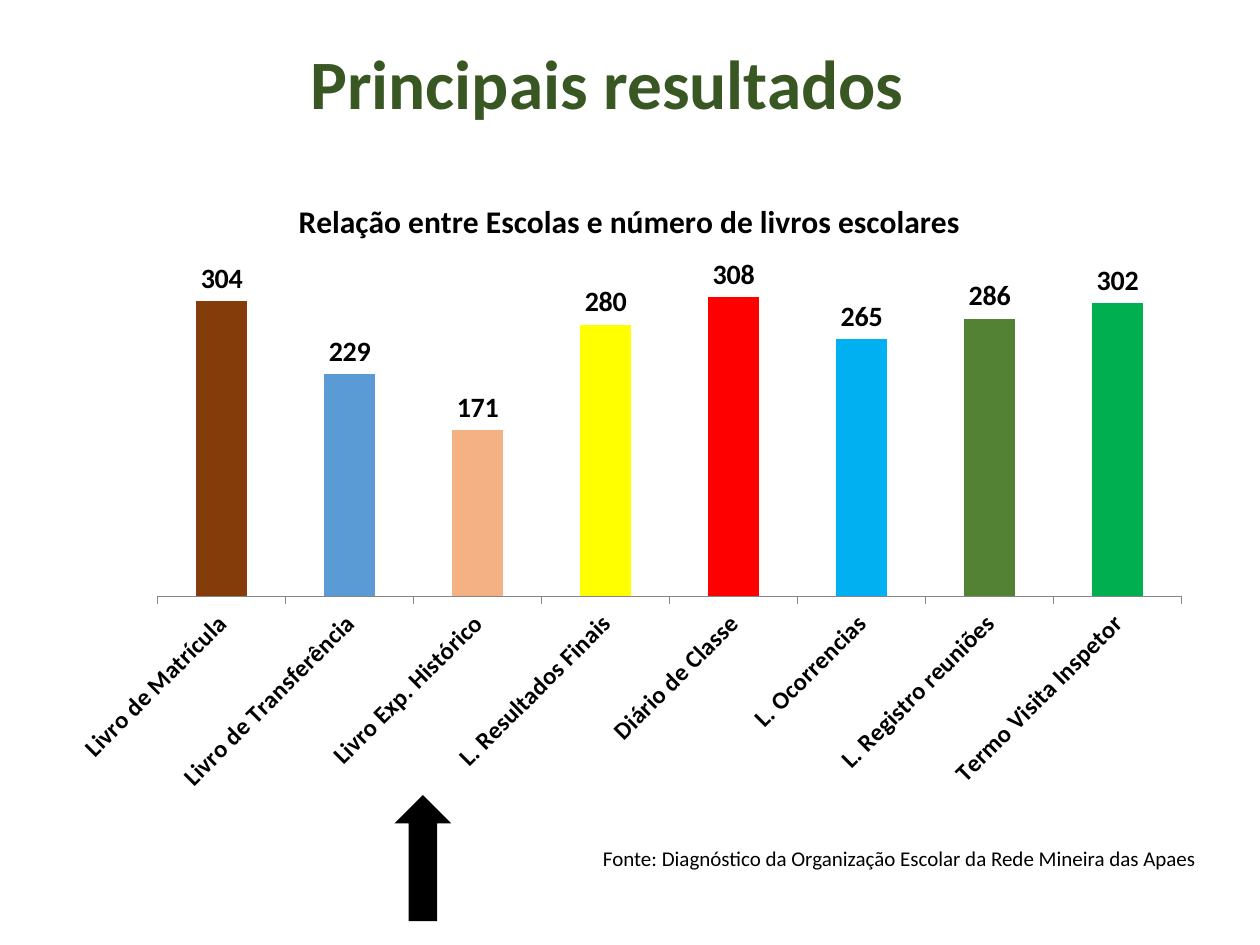
from lxml.etree import SubElement
from pptx import Presentation
from pptx.chart.data import CategoryChartData
from pptx.dml.color import RGBColor
from pptx.enum.chart import XL_CHART_TYPE, XL_LABEL_POSITION, XL_TICK_MARK
from pptx.enum.shapes import MSO_SHAPE
from pptx.enum.text import MSO_ANCHOR, PP_ALIGN
from pptx.oxml.ns import qn
from pptx.util import Pt

BLACK = RGBColor(0x00, 0x00, 0x00)
GRAY = RGBColor(0x86, 0x86, 0x86)
DARK_GREEN = RGBColor(0x38, 0x57, 0x23)
BROWN = RGBColor(0x84, 0x3C, 0x0B)
BLUE = RGBColor(0x5B, 0x9B, 0xD5)
PEACH = RGBColor(0xF4, 0xB1, 0x83)
YELLOW = RGBColor(0xFF, 0xFF, 0x00)
RED = RGBColor(0xFF, 0x00, 0x00)
SKY_BLUE = RGBColor(0x00, 0xB0, 0xF0)
OLIVE_GREEN = RGBColor(0x54, 0x82, 0x35)
GREEN = RGBColor(0x00, 0xB0, 0x50)

BOOKS = [
    ("Livro de Matrícula", 304, BROWN),
    ("Livro de Transferência", 229, BLUE),
    ("Livro Exp. Histórico", 171, PEACH),
    ("L. Resultados Finais", 280, YELLOW),
    ("Diário de Classe", 308, RED),
    ("L. Ocorrencias", 265, SKY_BLUE),
    ("L. Registro reuniões", 286, OLIVE_GREEN),
    ("Termo Visita Inspetor", 302, GREEN),
]


def format_font(font, size, bold=False, color=BLACK):
    values = {"name": "Calibri", "size": Pt(size), "bold": bold}
    for attribute, value in values.items():
        setattr(font, attribute, value)
    font.color.rgb = color


def add_text(slide, text, box, alignment, size, bold, color):
    shape = slide.shapes.add_textbox(*map(Pt, box))
    shape.text_frame.word_wrap = True
    shape.text_frame.vertical_anchor = MSO_ANCHOR.MIDDLE
    paragraph = shape.text_frame.paragraphs[0]
    paragraph.text = text
    paragraph.alignment = alignment
    format_font(paragraph.runs[0].font, size, bold, color)


presentation = Presentation()
presentation.slide_width = Pt(720)
presentation.slide_height = Pt(540)
slide = presentation.slides.add_slide(presentation.slide_layouts[6])

add_text(slide, "Principais resultados", (36.7, 13, 620.6, 67.7),
         PP_ALIGN.CENTER, 39.6, True, DARK_GREEN)
add_text(slide, "Fonte: Diagnóstico da Organização Escolar da Rede Mineira das Apaes",
         (337.5, 479.5, 360, 21.8), PP_ALIGN.JUSTIFY, 12, False, BLACK)

# Chart
chart_data = CategoryChartData()
chart_data.categories = [name for name, count, color in BOOKS]
chart_data.add_series("Series 1", [count for name, count, color in BOOKS])
chart = slide.shapes.add_chart(XL_CHART_TYPE.COLUMN_CLUSTERED, Pt(31), Pt(100),
                               Pt(657.4), Pt(359.3), chart_data).chart
format_font(chart.font, 10)
chart.has_legend = False
chart.has_title = True
title_paragraph = chart.chart_title.text_frame.paragraphs[0]
title_paragraph.text = "Relação entre Escolas e número de livros escolares"
format_font(title_paragraph.runs[0].font, 18, True)

category_axis = chart.category_axis
category_axis.major_tick_mark = XL_TICK_MARK.OUTSIDE
category_axis.format.line.color.rgb = GRAY
category_axis.format.line.width = Pt(0.75)
format_font(category_axis.tick_labels.font, 14, True)
category_axis.tick_labels.font._element.getparent().getparent().getparent().find(
    qn("a:bodyPr")).set("rot", "-2700000")

value_axis = chart.value_axis
value_axis.visible = False
value_axis.has_major_gridlines = False
value_axis.minimum_scale = 0
value_axis.maximum_scale = 350

plot = chart.plots[0]
plot.gap_width = 150
plot.vary_by_categories = False
plot.has_data_labels = True
plot.data_labels.show_value = True
plot.data_labels.position = XL_LABEL_POSITION.OUTSIDE_END
format_font(plot.data_labels.font, 16, True)
series = plot.series[0]
series.format.fill.solid()
series.format.fill.fore_color.rgb = BLUE
for index, (name, count, color) in enumerate(BOOKS):
    fill = series.points[index].format.fill
    fill.solid()
    fill.fore_color.rgb = color

# Fixed inner plot area, as fractions of the chart
plot_area = chart._chartSpace.chart.plotArea
layout = plot_area.find(qn("c:layout"))
if layout is None:
    layout = SubElement(plot_area, qn("c:layout"))
    plot_area.insert(0, layout)
manual_layout = SubElement(layout, qn("c:manualLayout"))
for tag, value in {"layoutTarget": "inner", "xMode": "edge", "yMode": "edge",
                   "x": 0.09, "y": 0.13, "w": 0.89, "h": 0.54}.items():
    SubElement(manual_layout, qn(f"c:{tag}")).set("val", str(value))

# Arrow pointing up at the lowest column
arrow = slide.shapes.add_shape(MSO_SHAPE.DOWN_ARROW, Pt(225.4), Pt(454.3), Pt(32.4), Pt(72))
arrow.rotation = 180
arrow.shadow.inherit = False
arrow.fill.solid()
arrow.fill.fore_color.rgb = BLACK
arrow.line.fill.background()

presentation.save("out.pptx")
